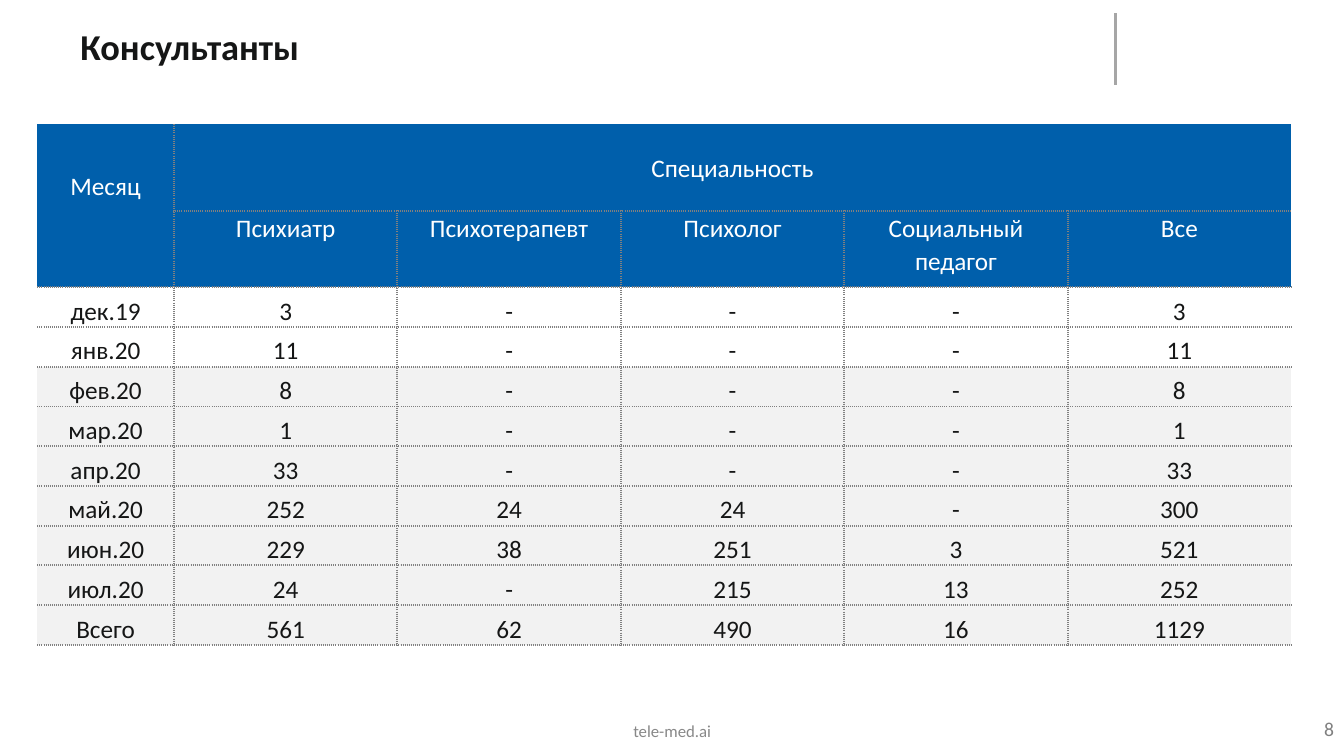
from dataclasses import dataclass

from lxml.etree import SubElement
from pptx import Presentation
from pptx.dml.color import RGBColor
from pptx.enum.shapes import MSO_CONNECTOR as Connector
from pptx.enum.text import MSO_ANCHOR as Anchor, PP_ALIGN as Align
from pptx.oxml.ns import qn
from pptx.util import Pt


@dataclass(frozen=True)
class Theme:
    font: str = "Calibri"
    ink: str = "151616"
    white: str = "FFFFFF"
    header: str = "005FAB"
    band: str = "F2F2F2"
    border: str = "808080"
    rule: str = "A6A6A6"
    number: str = "808080"
    footer: str = "888888"
    title_size: float = 26
    table_size: float = 18
    number_size: float = 14
    footer_size: float = 12
    border_width: float = 1.5
    plain_table: str = "{2D5ABB26-0587-4C30-8999-92F81FD0307C}"


class SlideBuilder:
    def __init__(self, deck, theme):
        self.theme = theme
        self.page = deck.slides.add_slide(deck.slide_layouts[6])

    def add_span(self, para, text, size, color, bold=False, align=Align.LEFT, spacing=1.0):
        para.alignment = align
        para.line_spacing = spacing
        span = para.add_run()
        span.text = text
        span.font.name = self.theme.font
        span.font.size = Pt(size)
        span.font.bold = bold
        span.font.color.rgb = RGBColor.from_string(color)

    def text(self, left, top, width, height, text, size, color, inset=(7.2, 3.6), **style):
        box = self.page.shapes.add_textbox(Pt(left), Pt(top), Pt(width), Pt(height))
        frame = box.text_frame
        frame.word_wrap = True
        frame.vertical_anchor = Anchor.MIDDLE
        frame.margin_left = frame.margin_right = Pt(inset[0])
        frame.margin_top = frame.margin_bottom = Pt(inset[1])
        self.add_span(frame.paragraphs[0], text, size, color, **style)

    def vertical_rule(self, x, top, bottom, width):
        line = self.page.shapes.add_connector(
            Connector.STRAIGHT, Pt(x), Pt(top), Pt(x), Pt(bottom))
        line.line.color.rgb = RGBColor.from_string(self.theme.rule)
        line.line.width = Pt(width)
        SubElement(line._element.spPr, qn("a:effectLst"))

    def table(self, left, top, widths, heights):
        frame = self.page.shapes.add_table(
            len(heights), len(widths), Pt(left), Pt(top), Pt(sum(widths)), Pt(sum(heights)))
        grid = frame.table
        grid._tbl.tblPr.find(qn("a:tableStyleId")).text = self.theme.plain_table
        grid.first_row = grid.horz_banding = False
        for column, width in zip(grid.columns, widths):
            column.width = Pt(width)
        for row, height in zip(grid.rows, heights):
            row.height = Pt(height)
        return grid

    def borders(self, cell, sides):
        properties = cell._tc.get_or_add_tcPr()
        for side in "LRTB":
            if side not in sides:
                continue
            line = SubElement(properties, qn(f"a:ln{side}"),
                              w=str(Pt(self.theme.border_width)))
            fill = SubElement(line, qn("a:solidFill"))
            SubElement(fill, qn("a:srgbClr"), val=self.theme.border)
            SubElement(line, qn("a:prstDash"), val="sysDot")

    def cell(self, cell, text, fill, color, anchor, sides):
        self.borders(cell, sides)
        cell.fill.solid()
        cell.fill.fore_color.rgb = RGBColor.from_string(fill)
        cell.vertical_anchor = anchor
        cell.margin_left = cell.margin_right = Pt(5)
        cell.margin_top = cell.margin_bottom = Pt(0)
        if text:
            self.add_span(cell.text_frame.paragraphs[0], text, self.theme.table_size,
                          color, align=Align.CENTER, spacing=1.07)


ROWS = [
    ["Месяц", "Специальность", "", "", "", ""],
    ["", "Психиатр", "Психотерапевт", "Психолог", "Социальный педагог", "Все"],
    ["дек.19", "3", "-", "-", "-", "3"],
    ["янв.20", "11", "-", "-", "-", "11"],
    ["фев.20", "8", "-", "-", "-", "8"],
    ["мар.20", "1", "-", "-", "-", "1"],
    ["апр.20", "33", "-", "-", "-", "33"],
    ["май.20", "252", "24", "24", "-", "300"],
    ["июн.20", "229", "38", "251", "3", "521"],
    ["июл.20", "24", "-", "215", "13", "252"],
    ["Всего", "561", "62", "490", "16", "1129"],
]
HEADER_ROWS = 2
FIRST_BANDED_ROW = 4


def consultants_table(slide):
    theme = slide.theme
    last = len(ROWS[0]) - 1
    heights = [62.4, 54.2] + [28.4] * (len(ROWS) - HEADER_ROWS)
    grid = slide.table(26.6, 88.6, [97.7] + [159.6] * last, heights)
    for r, values in enumerate(ROWS):
        is_header = r < HEADER_ROWS
        if is_header:
            fill, color = theme.header, theme.white
        else:
            fill = theme.band if r >= FIRST_BANDED_ROW else theme.white
            color = theme.ink
        for c, value in enumerate(values):
            # Inner edges and the bottom edge are dotted; merged areas stay whole
            sides = set("LRTB")
            if c == 0 or (r == 0 and c > 1):
                sides.discard("L")
            if c == last or (r == 0 and c > 0):
                sides.discard("R")
            if r == 0 or (r == 1 and c == 0):
                sides.discard("T")
            if r == 0 and c == 0:
                sides.discard("B")
            if not is_header:
                anchor = Anchor.BOTTOM
            else:
                anchor = Anchor.MIDDLE if r == 0 else Anchor.TOP
            slide.cell(grid.cell(r, c), value, fill, color, anchor, sides)
    # Merged header cells
    month = grid.cell(0, 0)
    month.merge(grid.cell(1, 0))
    month.margin_bottom = Pt(29)
    grid.cell(0, 1).merge(grid.cell(0, last))


def main():
    deck = Presentation()
    deck.slide_width, deck.slide_height = Pt(960), Pt(540)
    theme = Theme()
    slide = SlideBuilder(deck, theme)

    # Heading
    slide.vertical_rule(797, 9.4, 60.5, 2)
    slide.text(50.4, 0, 715, 69.1, "Консультанты", theme.title_size, theme.ink,
               bold=True, spacing=0.9)

    # Consultations by month and specialty
    consultants_table(slide)

    # Footer
    slide.text(321.8, 512.6, 316.8, 19.4, "tele-med.ai", theme.footer_size, theme.footer,
               inset=(3.6, 3.6), align=Align.CENTER)
    slide.text(825, 505.4, 135, 29.5, "8", theme.number_size, theme.number,
               align=Align.RIGHT)

    deck.save("out.pptx")


if __name__ == "__main__":
    main()
